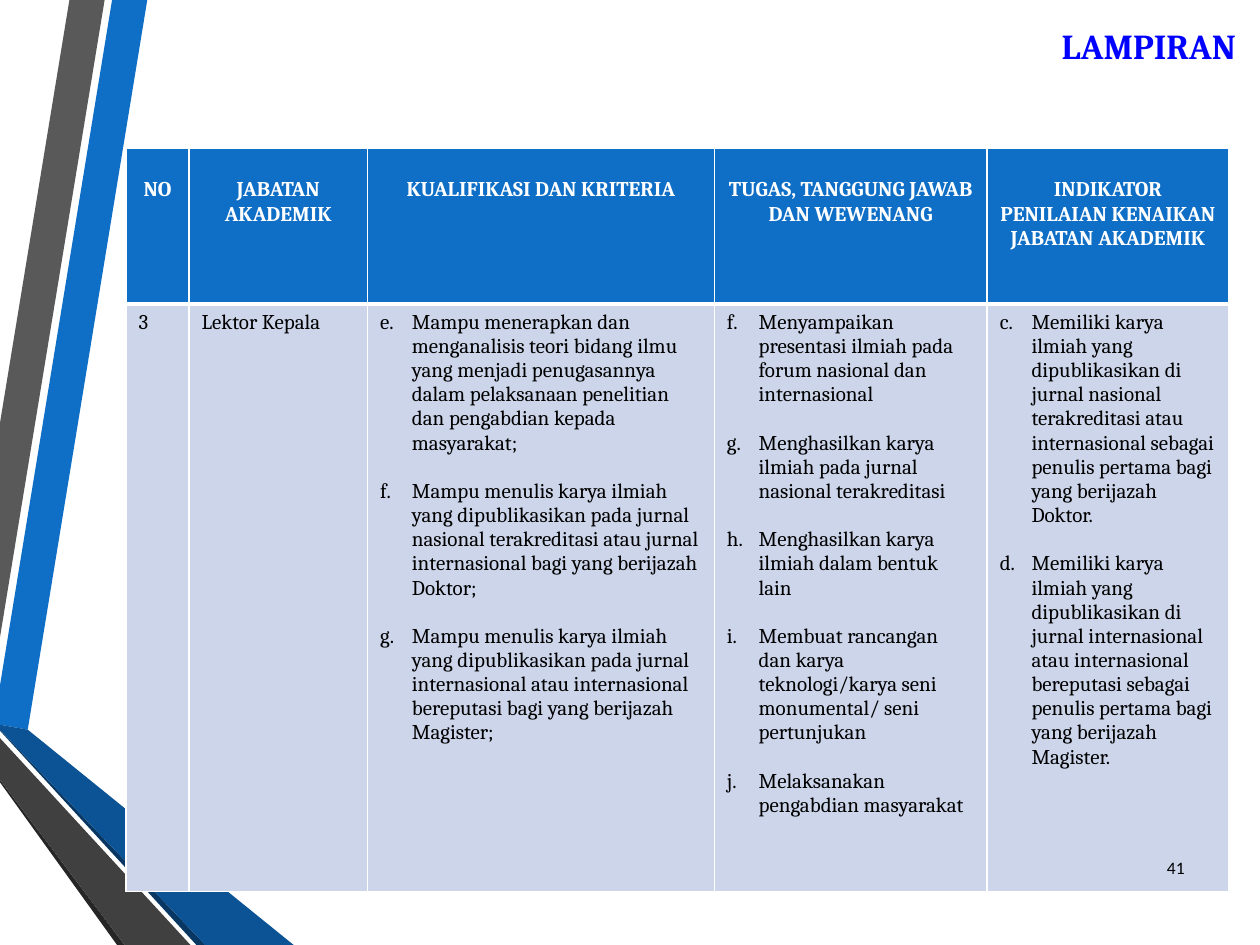
from dataclasses import dataclass
from typing import Optional

from lxml.etree import SubElement
from pptx import Presentation
from pptx.dml.color import RGBColor
from pptx.enum.text import MSO_ANCHOR, MSO_AUTO_SIZE, PP_ALIGN
from pptx.oxml.ns import qn
from pptx.util import Cm, Pt

COLORS = {
    "blue": "0F6FC6", "mid_blue": "0B5394", "navy": "083763",
    "gray": "595959", "dark_gray": "404040", "charcoal": "262626",
    "cell": "CCD5EA", "title": "0000FF", "white": "FFFFFF", "black": "000000",
}
W, H = 25.4, 19.05
ROW_HEIGHTS = (3.15, 11.84)


@dataclass
class Ribbon:
    color: str
    points: list[tuple[float, float]]  # cm


@dataclass
class Column:
    width: float  # cm
    header: str
    items: list[str]
    start: Optional[int] = None  # first letter of an a. b. c. list


RIBBONS = [
    Ribbon("blue", [(0, 13.82), (0, 14.61), (0.56, 14.71), (2.97, 0), (2.26, 0)]),
    Ribbon("gray", [(2.11, 0), (1.4, 0), (0, 8.53), (0, 12.85)]),
    Ribbon("charcoal", [(0, 15.72), (0, 15.77), (2.36, H), (2.51, H)]),
    Ribbon("navy", [(0, 14.71), (0, 14.73), (3.96, H), (4.14, H)]),
    Ribbon("mid_blue", [(0, 14.71), (4.14, H), (5.92, H), (0.56, 14.71), (0, 14.61)]),
    Ribbon("dark_gray", [(0, 15.72), (2.51, H), (3.84, H), (0, 14.88)]),
]

COLUMNS = [
    Column(1.27, "NO", ["3"]),
    Column(3.6, "JABATAN AKADEMIK", ["Lektor Kepala"]),
    Column(6.99, "KUALIFIKASI DAN KRITERIA", [
        "Mampu menerapkan dan menganalisis teori bidang ilmu yang menjadi "
        "penugasannya dalam pelaksanaan penelitian dan pengabdian kepada masyarakat;",
        "Mampu menulis karya ilmiah yang dipublikasikan pada jurnal nasional "
        "terakreditasi atau jurnal internasional bagi yang berijazah Doktor;",
        "Mampu menulis karya ilmiah yang dipublikasikan pada jurnal internasional "
        "atau internasional bereputasi bagi yang berijazah Magister;",
    ], 5),
    Column(5.5, "TUGAS, TANGGUNG JAWAB DAN WEWENANG", [
        "Menyampaikan presentasi ilmiah pada forum nasional dan internasional",
        "Menghasilkan karya ilmiah pada jurnal nasional terakreditasi",
        "Menghasilkan karya ilmiah dalam bentuk lain",
        "Membuat rancangan dan karya teknologi/karya seni monumental/ seni pertunjukan",
        "Melaksanakan pengabdian masyarakat",
    ], 6),
    Column(4.87, "INDIKATOR PENILAIAN KENAIKAN JABATAN AKADEMIK", [
        "Memiliki karya ilmiah yang dipublikasikan di jurnal nasional terakreditasi "
        "atau internasional sebagai penulis pertama bagi yang berijazah Doktor.",
        "Memiliki karya ilmiah yang dipublikasikan di jurnal internasional atau "
        "internasional bereputasi sebagai penulis pertama bagi yang berijazah Magister.",
    ], 3),
]


def rgb(name: str) -> RGBColor:
    return RGBColor.from_string(COLORS[name])


def format_text(p, size: float, color: str, align=PP_ALIGN.LEFT,
                bold: bool = False, font: str = "Cambria") -> None:
    p.alignment = align
    for r in p.runs:
        r.font.name, r.font.size, r.font.bold = font, Pt(size), bold
        r.font.color.rgb = rgb(color)


def draw_ribbon(s, ribbon: Ribbon) -> None:
    pts = [(x * 100, y * 100) for x, y in ribbon.points]
    builder = s.shapes.build_freeform(*pts[0], scale=Cm(0.01))
    builder.add_line_segments(pts[1:], close=True)
    sp = builder.convert_to_shape()
    sp.shadow.inherit = False
    sp.fill.solid()
    sp.fill.fore_color.rgb = rgb(ribbon.color)
    sp.line.fill.background()


def number_paragraph(p, start: int) -> None:
    pPr = p._p.get_or_add_pPr()
    pPr.set("marL", str(Cm(0.64)))
    pPr.set("indent", str(-Cm(0.64)))
    SubElement(pPr, qn("a:buFont"), typeface="+mj-lt")
    SubElement(pPr, qn("a:buAutoNum"), type="alphaLcPeriod", startAt=str(start))


def style_cell(cell, fill: str, top: float, bottom: float) -> None:
    """Set the fill and white borders; top and bottom are widths in points."""
    tcPr = cell._tc.get_or_add_tcPr()
    for side, width in zip("LRTB", (1, 1, top, bottom)):
        ln = SubElement(tcPr, qn(f"a:ln{side}"), w=str(Pt(width)))
        solid = SubElement(ln, qn("a:solidFill"))
        SubElement(solid, qn("a:srgbClr"), val=COLORS["white"])
    cell.fill.solid()
    cell.fill.fore_color.rgb = rgb(fill)


def draw_table(s, columns: list[Column]) -> None:
    width = sum(c.width for c in columns)
    table = s.shapes.add_table(2, len(columns), Cm(2.54), Cm(2.98),
                               Cm(width), Cm(sum(ROW_HEIGHTS))).table
    for row, height in zip(table.rows, ROW_HEIGHTS):
        row.height = Cm(height)
    for i, col in enumerate(columns):
        table.columns[i].width = Cm(col.width)
        head, body = table.cell(0, i), table.cell(1, i)
        style_cell(head, "blue", 1, 3)
        style_cell(body, "cell", 3, 1)
        head.margin_top = Cm(0.61)
        head.text_frame.text = col.header
        format_text(head.text_frame.paragraphs[0], 12, "white", PP_ALIGN.CENTER, True)
        body.text_frame.text = "\n".join(col.items)
        for n, p in enumerate(body.text_frame.paragraphs):
            format_text(p, 12, "black")
            if n:
                p.space_before = Pt(13.8)
            if col.start:
                number_paragraph(p, col.start)


def draw_title(s, text: str) -> None:
    title = s.shapes.title
    title.left, title.top, title.width, title.height = Cm(6.55), Cm(0.36), Cm(18.62), Cm(1.12)
    tf = title.text_frame
    tf.text = text
    tf.auto_size = MSO_AUTO_SIZE.NONE
    tf.vertical_anchor = MSO_ANCHOR.TOP
    format_text(tf.paragraphs[0], 20, "title", PP_ALIGN.RIGHT, True)


def draw_page_number(s, number: str) -> None:
    tf = s.shapes.add_textbox(Cm(22.94), Cm(16.97), Cm(1.19), Cm(1.02)).text_frame
    tf.word_wrap = True
    tf.vertical_anchor = MSO_ANCHOR.MIDDLE
    tf.text = number
    format_text(tf.paragraphs[0], 10, "black", PP_ALIGN.RIGHT, font="Calibri")


def main() -> None:
    prs = Presentation()
    prs.slide_width, prs.slide_height = Cm(W), Cm(H)
    s = prs.slides.add_slide(prs.slide_layouts[5])
    for ribbon in RIBBONS:
        draw_ribbon(s, ribbon)
    draw_table(s, COLUMNS)
    draw_page_number(s, "41")
    draw_title(s, "LAMPIRAN")
    prs.save("out.pptx")


if __name__ == "__main__":
    main()
